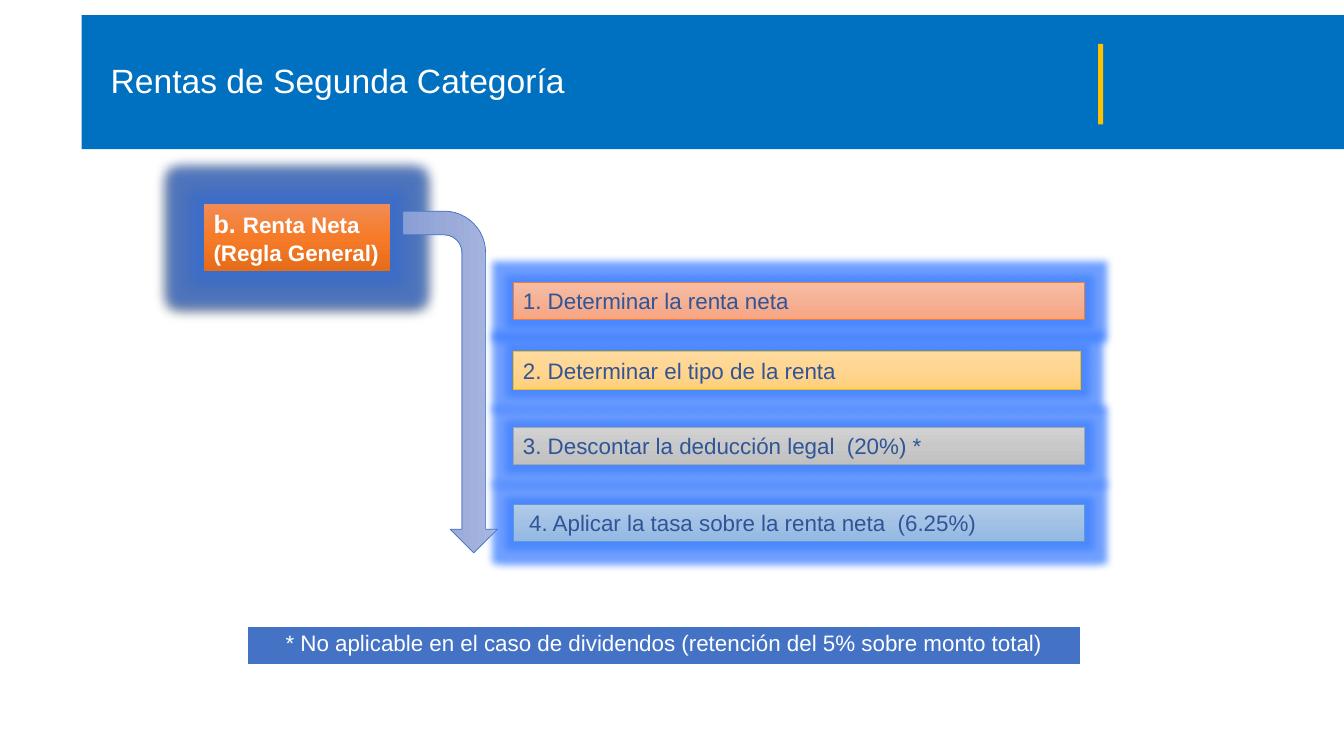
from lxml.etree import SubElement
from pptx import Presentation
from pptx.dml.color import RGBColor
from pptx.enum.shapes import MSO_SHAPE
from pptx.enum.text import MSO_ANCHOR, MSO_AUTO_SIZE, PP_ALIGN
from pptx.oxml.ns import qn
from pptx.util import Pt


def paint(code):
    return RGBColor.from_string(code)


def add_node(root, tag, **attrs):
    return SubElement(root, qn(tag), {k: str(v) for k, v in attrs.items()})


def add_tint(root, code, alpha=None):
    tint = add_node(root, "a:srgbClr", val=code)
    if alpha:
        add_node(tint, "a:alpha", val=alpha * 1000)


class Slide:
    font = "Arial"
    size = 16

    def __init__(self, deck):
        self.page = deck.slides.add_slide(deck.slide_layouts[6])

    def add_text(self, par, text, color, size=None, bold=False):
        run = par.add_run()
        run.text = text
        run.font.name = self.font
        run.font.size = Pt(size or self.size)
        run.font.bold = bold
        run.font.color.rgb = paint(color)

    def shape(self, box, fill, line=None, kind=MSO_SHAPE.RECTANGLE):
        item = self.page.shapes.add_shape(kind, *map(Pt, box))
        item.shadow.inherit = False
        if isinstance(fill, str):
            item.fill.solid()
            item.fill.fore_color.rgb = paint(fill)
        else:
            self.blend(item, fill)
        if line:
            item.line.color.rgb = paint(line)
            item.line.width = Pt(0.5)
        else:
            item.line.fill.background()
        return item

    def blend(self, item, codes):
        item.fill.gradient()
        item.fill.gradient_angle = 270
        stops = item._element.spPr.find(".//" + qn("a:gsLst"))
        stops.clear()
        for i, code in enumerate(codes):
            add_tint(add_node(stops, "a:gs", pos=i * 50000), code)

    def glow(self, item, size, code, alpha):
        effects = item._element.spPr.find(qn("a:effectLst"))
        add_tint(add_node(effects, "a:glow", rad=Pt(size)), code, alpha)
        return effects

    def shade(self, effects):
        cast = add_node(effects, "a:outerShdw", blurRad=Pt(4.5), dist=Pt(1.5),
                        dir=5400000, algn="ctr", rotWithShape=0)
        add_tint(cast, "000000", 63)

    def frame(self, item):
        body = item.text_frame
        body.word_wrap = True
        body.auto_size = MSO_AUTO_SIZE.SHAPE_TO_FIT_TEXT
        body.vertical_anchor = MSO_ANCHOR.TOP
        return body

    def title(self, box, text):
        body = self.page.shapes.add_textbox(*map(Pt, box)).text_frame
        body.word_wrap = True
        body.vertical_anchor = MSO_ANCHOR.MIDDLE
        par = body.paragraphs[0]
        par.line_spacing = 0.9
        self.add_text(par, text, "FFFFFF", 24)

    def topic(self, box, fill, lines):
        item = self.shape(box, fill)
        self.shade(self.glow(item, 18, "3B6FD0", 75))
        body = self.frame(item)
        for i, line in enumerate(lines):
            par = body.add_paragraph() if i else body.paragraphs[0]
            par.alignment = PP_ALIGN.JUSTIFY
            props = par._p.get_or_add_pPr()
            props.set("marL", str(Pt(21)))
            props.set("indent", str(Pt(-21)))
            for text, size in line:
                self.add_text(par, text, "FFFFFF", size, True)

    def step(self, box, fill, line, text):
        item = self.shape(box, fill, line)
        self.glow(item, 11, "4080FF", 75)
        par = self.frame(item).paragraphs[0]
        par.alignment = PP_ALIGN.LEFT
        self.add_text(par, text, "2F5597")

    def note(self, box, text):
        grid = self.page.shapes.add_table(1, 1, *map(Pt, box)).table
        cell = grid.cell(0, 0)
        props = cell._tc.get_or_add_tcPr()
        for side, width in zip("LRTB", (1, 1, 1, 3)):
            edge = add_node(props, "a:ln" + side, w=Pt(width))
            add_tint(add_node(edge, "a:solidFill"), "FFFFFF")
        cell.fill.solid()
        cell.fill.fore_color.rgb = paint("4472C4")
        cell.margin_left = cell.margin_right = Pt(7.2)
        cell.margin_top = cell.margin_bottom = Pt(3.6)
        par = cell.text_frame.paragraphs[0]
        par.alignment = PP_ALIGN.CENTER
        self.add_text(par, text, "FFFFFF")


STEPS = [
    (201.6, 408.24, ("F7BDA5", "F5B196", "F8A582"), "ED7D31",
     "1. Determinar la renta neta"),
    (251.28, 405.36, ("FFDB9E", "FFD590", "FFD07C"), "FFC000",
     "2. Determinar el tipo de la renta"),
    (305.28, 408.24, ("D2D2D2", "C8C8C8", "C0C0C0"), "A5A5A5",
     "3. Descontar la deducción legal  (20%) *"),
    (360, 408.24, ("B1CBE9", "A3C1E5", "93B9E4"), "5B9BD5",
     " 4. Aplicar la tasa sobre la renta neta  (6.25%)"),
]


def main():
    deck = Presentation()
    deck.slide_width, deck.slide_height = Pt(960), Pt(540)
    slide = Slide(deck)
    slide.shape((58.32, 10.8, 901.68, 95.76), "0070C0")
    slide.shape((784.4, 31.3, 3.6, 57.6), "FFC000")
    slide.title((72, 13.68, 783.36, 90), "Rentas de Segunda Categoría")
    slide.topic((145.44, 145.44, 133.2, 48.24), ("F18C57", "F67B28", "E56C19"),
                [[("b. ", 18), ("Renta Neta", 16)], [("(Regla General)", 16)]])
    for top, width, fill, line, text in STEPS:
        slide.step((366.48, top, width, 26.64), fill, line, text)
    arrow = slide.shape((199.44, 239.04, 244.08, 67.68),
                        ("A8B7DF", "9AABD9", "889ED7"), "4472C4",
                        MSO_SHAPE.BENT_ARROW)
    arrow.rotation = 90
    slide.note((176.4, 447.12, 595.44, 28.8),
               "* No aplicable en el caso de dividendos "
               "(retención del 5% sobre monto total)")
    deck.save("out.pptx")


if __name__ == "__main__":
    main()
